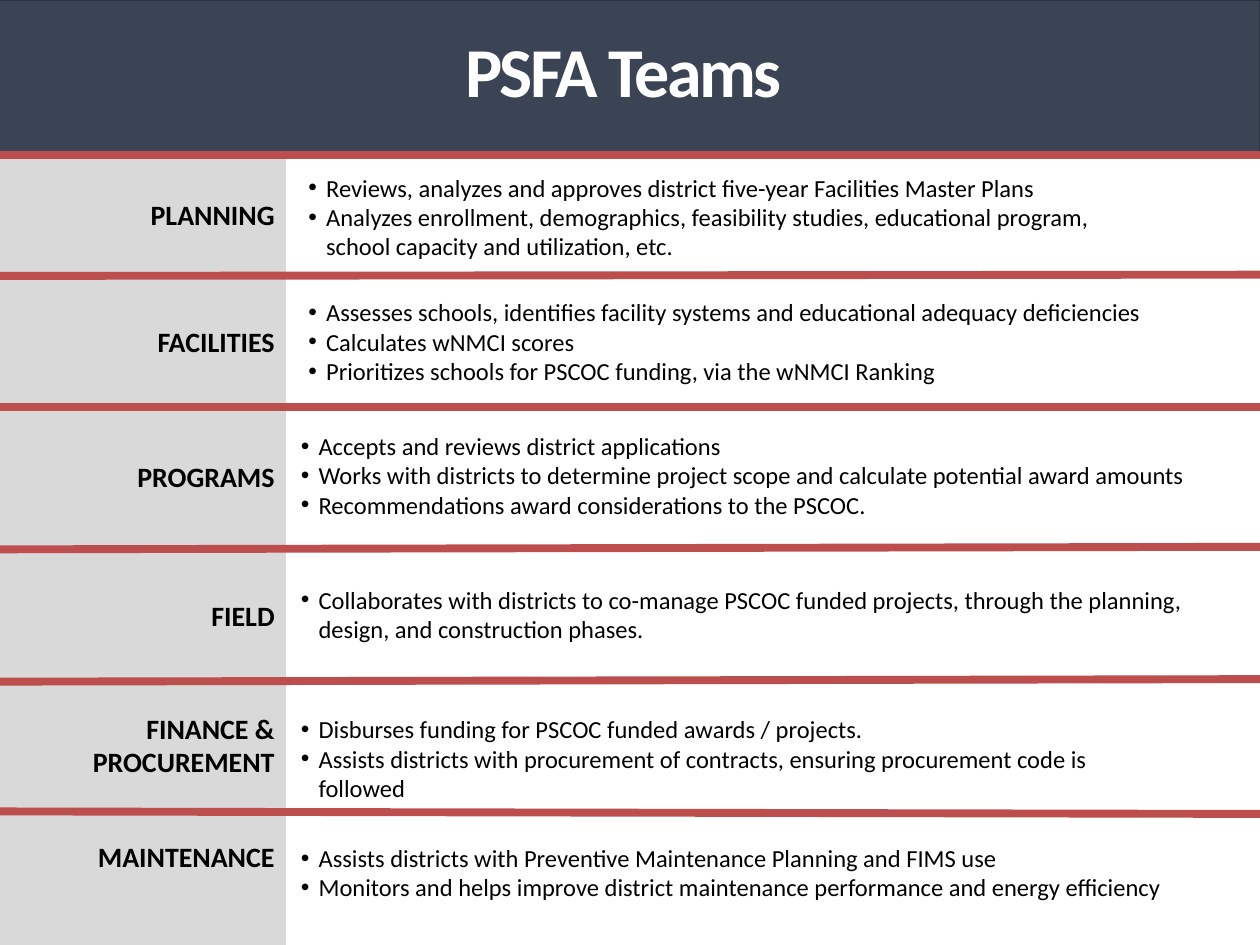
from lxml.etree import SubElement
from pptx import Presentation
from pptx.dml.color import RGBColor
from pptx.enum.shapes import MSO_CONNECTOR as Connector, MSO_SHAPE as Shape
from pptx.enum.text import MSO_ANCHOR as Anchor, PP_ALIGN as Align
from pptx.oxml.ns import qn
from pptx.util import Inches, Pt

TITLE = "PSFA Teams"
TEAMS = [
    {"name": "PLANNING", "label_top": 1.51, "duties_box": (2.35, 1.32, 6.86, 0.81), "duties": [
        "Reviews, analyzes and approves district five-year Facilities Master Plans",
        "Analyzes enrollment, demographics, feasibility studies, educational program, "
        "school capacity and utilization, etc."]},
    {"name": "FACILITIES", "label_top": 2.52, "duties_box": (2.35, 2.31, 7.76, 0.81), "duties": [
        "Assesses schools, identifies facility systems and educational adequacy deficiencies",
        "Calculates wNMCI scores",
        "Prioritizes schools for PSCOC funding, via the wNMCI Ranking"]},
    {"name": "PROGRAMS", "label_top": 3.59, "duties_box": (2.29, 3.37, 7.5, 0.81), "duties": [
        "Accepts and reviews district applications",
        "Works with districts to determine project scope and calculate potential award amounts",
        "Recommendations award considerations to the PSCOC."]},
    {"name": "FIELD", "label_top": 4.69, "duties_box": (2.29, 4.59, 7.31, 0.57), "duties": [
        "Collaborates with districts to co-manage PSCOC funded projects, through the planning, "
        "design, and construction phases."]},
    {"name": "FINANCE & PROCUREMENT", "label_top": 5.72, "duties_box": (2.29, 5.62, 7.11, 0.57), "duties": [
        "Disburses funding for PSCOC funded awards / projects.",
        "Assists districts with procurement of contracts, ensuring procurement code is followed"]},
    {"name": "MAINTENANCE", "label_top": 6.61, "duties_box": (2.29, 6.64, 7.11, 0.57), "duties": [
        "Assists districts with Preventive Maintenance Planning and FIMS use",
        "Monitors and helps improve district maintenance performance and energy efficiency"]},
]
DIVIDERS = [(1.23, 1.23), (2.19, 2.18), (3.23, 3.23), (4.36, 4.34), (5.41, 5.39), (6.44, 6.46)]
WIDTH, HEIGHT, HEADER_HEIGHT = 10, 7.5, 1.23


def color(value):
    """Return the colour for a hex string."""
    return RGBColor.from_string(value)


def set_font(paragraph, size, value="000000", bold=False):
    """Set the font of a whole paragraph."""
    font = paragraph.font
    font.name, font.size, font.bold = "Calibri", Pt(size), bold
    font.color.rgb = color(value)


def set_insets(frame, left, top, right, bottom):
    """Set the inner margins of a text frame."""
    frame.margin_left, frame.margin_top = Inches(left), Inches(top)
    frame.margin_right, frame.margin_bottom = Inches(right), Inches(bottom)


def add_block(slide, box, kind=Shape.RECTANGLE, fill=None, outline=None):
    """Add a flat shape with an optional fill and outline."""
    block = slide.shapes.add_shape(kind, *map(Inches, box))
    block.shadow.inherit = False
    if fill:
        block.fill.solid()
        block.fill.fore_color.rgb = color(fill)
    else:
        block.fill.background()
    if outline:
        block.line.color.rgb = color(outline)
        block.line.width = Pt(1)
    else:
        block.line.fill.background()
    return block


def add_title(slide):
    """Add the slide heading."""
    frame = slide.shapes.add_textbox(*map(Inches, (-1.67, 0.14, 13.33, 0.8))).text_frame
    frame.word_wrap = True
    frame.vertical_anchor = Anchor.BOTTOM
    set_insets(frame, 0, 0.05, 0.1, 0.05)
    heading = frame.paragraphs[0]
    heading.text = TITLE
    heading.alignment = Align.CENTER
    heading.line_spacing = 0.9
    set_font(heading, 40, "FFFFFF", True)
    heading.runs[0]._r.get_or_add_rPr().set("spc", "-150")


def add_label(slide, name, top):
    """Add a team name in the left column."""
    label = add_block(slide, (0.2, top, 1.98, 0.38), Shape.ROUNDED_RECTANGLE)
    label.adjustments[0] = 0
    frame = label.text_frame
    frame.word_wrap = True
    frame.vertical_anchor = Anchor.MIDDLE
    set_insets(frame, 0, 0.03, 0, 0.03)
    team = frame.paragraphs[0]
    team.text = name
    team.alignment = Align.RIGHT
    set_font(team, 16, bold=True)


def add_duties(slide, duties, box):
    """Add the bulleted duties of a team."""
    frame = slide.shapes.add_textbox(*map(Inches, box)).text_frame
    frame.word_wrap = True
    for index, text in enumerate(duties):
        duty = frame.add_paragraph() if index else frame.paragraphs[0]
        duty.text = text
        properties = duty._p.get_or_add_pPr()
        properties.set("marL", str(Inches(0.14)))
        properties.set("indent", str(Inches(-0.14)))
        SubElement(properties, qn("a:buFont")).set("typeface", "Arial")
        SubElement(properties, qn("a:buChar")).set("char", "•")
        set_font(duty, 14)


def add_divider(slide, start, end):
    """Add a line across the slide between two heights."""
    divider = slide.shapes.add_connector(
        Connector.STRAIGHT, Inches(0), Inches(start), Inches(WIDTH), Inches(end))
    divider.line.color.rgb = color("BC4E4D")
    divider.line.width = Pt(4.5)
    SubElement(divider._element.spPr, qn("a:effectLst"))


def main():
    """Build and save the slide."""
    deck = Presentation()
    deck.slide_width, deck.slide_height = Inches(WIDTH), Inches(HEIGHT)
    slide = deck.slides.add_slide(deck.slide_layouts[6])
    add_block(slide, (0, HEADER_HEIGHT, 2.27, HEIGHT - HEADER_HEIGHT), fill="D9D9D9")
    add_block(slide, (-0.08, 0, WIDTH + 0.08, HEADER_HEIGHT), fill="3B4455", outline="2C323F")
    add_title(slide)
    for team in TEAMS:
        add_label(slide, team["name"], team["label_top"])
        add_duties(slide, team["duties"], team["duties_box"])
    for start, end in DIVIDERS:
        add_divider(slide, start, end)
    deck.save("out.pptx")


if __name__ == "__main__":
    main()
